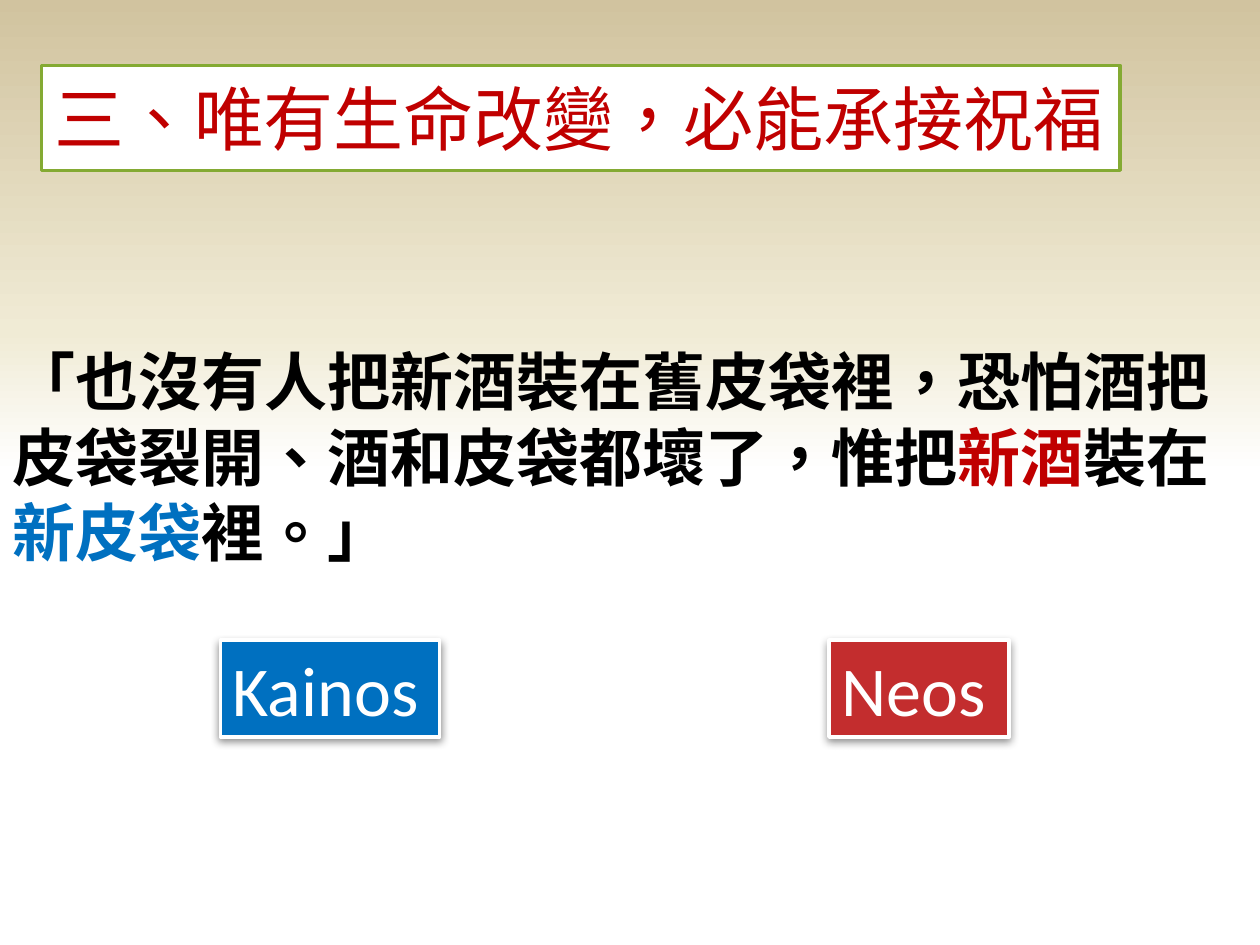
"""Build a slide on new wine and new wineskins with two labelled Greek words."""
from copy import deepcopy

from lxml import etree
from pptx import Presentation
from pptx import util as u
from pptx.dml.color import RGBColor
from pptx.enum import lang, shapes, text
from pptx.oxml import ns

WHITE = RGBColor(0xFF, 0xFF, 0xFF)
BLACK = RGBColor(0x00, 0x00, 0x00)
CREAM = RGBColor(0xF0, 0xEB, 0xD5)
TAN = RGBColor(0xD1, 0xC3, 0x9F)
GREEN = RGBColor(0x84, 0xAA, 0x33)
DARK_RED = RGBColor(0xC0, 0x00, 0x00)
RED = RGBColor(0xC3, 0x2D, 0x2E)
BLUE = RGBColor(0x00, 0x70, 0xC0)
CJK_FONT = "Noto Sans CJK SC"


def write_runs(shape, runs, anchor=text.MSO_ANCHOR.TOP, wrap=False, **font_format):
    frame_format = {
        "word_wrap": wrap,
        "auto_size": text.MSO_AUTO_SIZE.SHAPE_TO_FIT_TEXT,
        "vertical_anchor": anchor,
    }
    for name, value in frame_format.items():
        setattr(shape.text_frame, name, value)
    paragraph = shape.text_frame.paragraphs[0]
    paragraph.alignment = text.PP_ALIGN.LEFT
    for wording, color in runs:
        run = paragraph.add_run()
        run.text = wording
        for name, value in font_format.items():
            setattr(run.font, name, value)
        run.font.color.rgb = color
        east_asian = etree.SubElement(run.font._element, ns.qn("a:ea"))
        east_asian.set("typeface", CJK_FONT)


def paint_box(shape, fill_color, line_color):
    shape.fill.solid()
    shape.fill.fore_color.rgb = fill_color
    shape.line.color.rgb = line_color
    shape.line.width = u.Pt(2)


presentation = Presentation()
presentation.slide_width, presentation.slide_height = u.Inches(10), u.Inches(7.5)
slide = presentation.slides.add_slide(presentation.slide_layouts[5])
chinese = lang.MSO_LANGUAGE_ID.TRADITIONAL_CHINESE

background = slide.background.fill
background.gradient()
background.gradient_angle = 90
stop_list = slide.element.find(".//" + ns.qn("a:gsLst"))
stop_list.append(deepcopy(stop_list[0]))
gradient = [(0.5, WHITE), (0.65, CREAM), (1, TAN)]
for stop, (position, color) in zip(background.gradient_stops, gradient):
    stop.position = position
    stop.color.rgb = color

title = slide.shapes.title
title_place = {"left": 0.33, "top": 0.55, "width": 8.56, "height": 0.77}
for name, value in title_place.items():
    setattr(title, name, u.Inches(value))
paint_box(title, WHITE, GREEN)
write_runs(title, [("三、唯有生命改變，必能承接祝福", DARK_RED)],
           anchor=text.MSO_ANCHOR.MIDDLE, size=u.Pt(40), name="Lato", language_id=chinese)

greek_words = [("Neos", 6.58, 1.43, RED), ("Kainos", 1.75, 1.74, BLUE)]
for word, left, width, color in greek_words:
    box = slide.shapes.add_shape(shapes.MSO_SHAPE.RECTANGLE, u.Inches(left), u.Inches(5.08),
                                 u.Inches(width), u.Inches(0.77))
    paint_box(box, color, WHITE)
    box.shadow.inherit = False
    effects = box.element.spPr.find(ns.qn("a:effectLst"))
    shadow = etree.SubElement(effects, ns.qn("a:outerShdw"), blurRad=str(u.Pt(5)),
                              dist=str(u.Pt(2)), dir="5400000", rotWithShape="0")
    shadow_color = etree.SubElement(shadow, ns.qn("a:srgbClr"), val=str(BLACK))
    etree.SubElement(shadow_color, ns.qn("a:alpha"), val="43000")
    write_runs(box, [(word, WHITE)], size=u.Pt(40), name="Calibri")

verse = slide.shapes.add_textbox(0, u.Inches(2.67), u.Inches(9.83), u.Inches(1.92))
verse_runs = [
    ("「也沒有人把新酒裝在舊皮袋裡，恐怕酒把皮袋裂開、酒和皮袋都壞了，惟把", BLACK),
    ("新酒", DARK_RED),
    ("裝在", BLACK),
    ("新皮袋", BLUE),
    ("裡。」", BLACK),
]
write_runs(verse, verse_runs, wrap=True, size=u.Pt(36), name=CJK_FONT, bold=True,
           language_id=chinese)

presentation.save("out.pptx")
